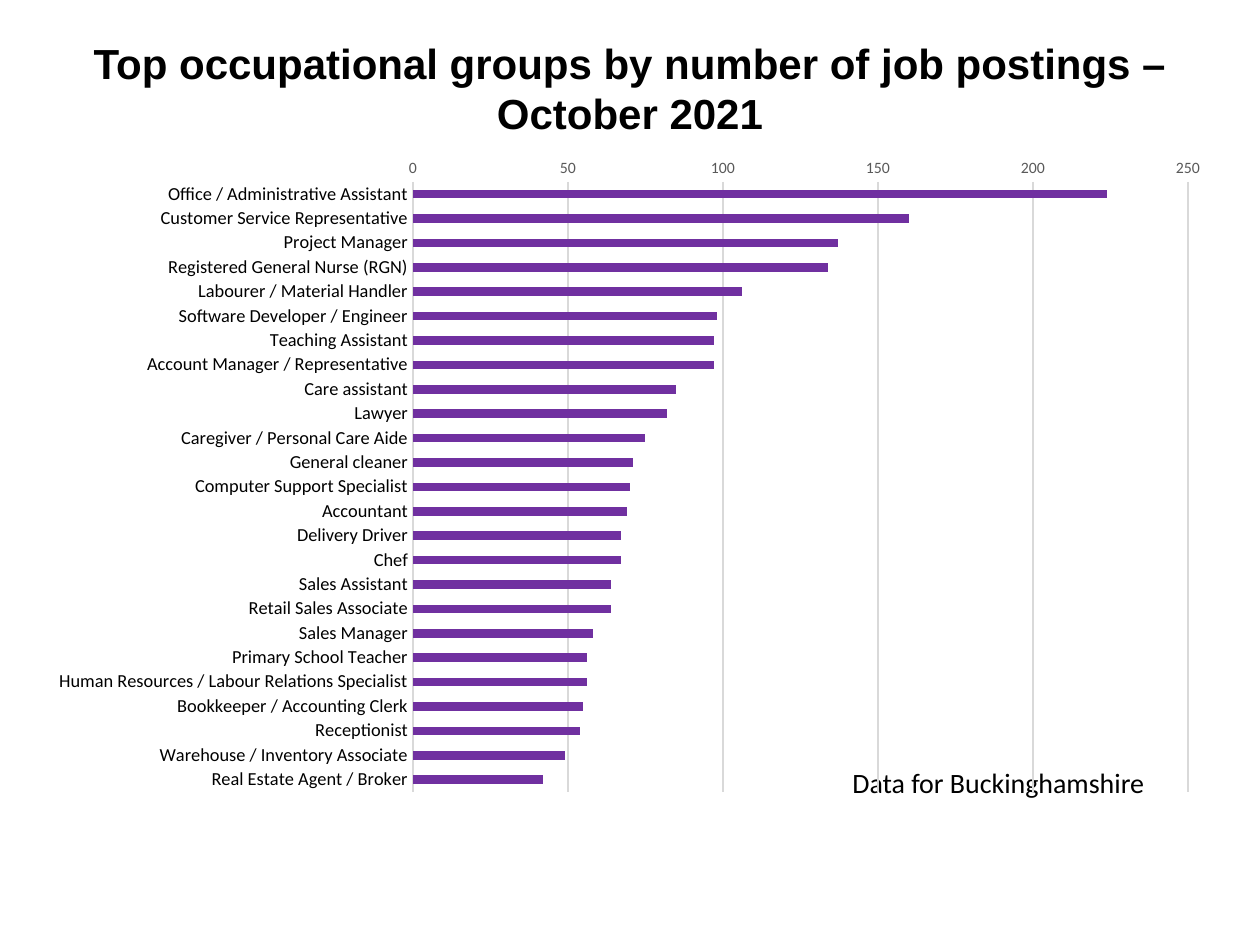
import lxml.etree
import pptx
import pptx.chart.data
import pptx.dml.color
import pptx.enum.chart
import pptx.enum.text
import pptx.oxml
import pptx.oxml.ns
import pptx.util

PX = 914400 // 126
COLORS = {"ink": "000000", "bar": "7030A0", "grid": "D9D9D9", "scale": "595959"}
JOBS = {
    "Office / Administrative Assistant": 224,
    "Customer Service Representative": 160,
    "Project Manager": 137,
    "Registered General Nurse (RGN)": 134,
    "Labourer / Material Handler": 106,
    "Software Developer / Engineer": 98,
    "Teaching Assistant": 97,
    "Account Manager / Representative": 97,
    "Care assistant": 85,
    "Lawyer": 82,
    "Caregiver / Personal Care Aide": 75,
    "General cleaner": 71,
    "Computer Support Specialist": 70,
    "Accountant": 69,
    "Delivery Driver": 67,
    "Chef": 67,
    "Sales Assistant": 64,
    "Retail Sales Associate": 64,
    "Sales Manager": 58,
    "Primary School Teacher": 56,
    "Human Resources / Labour Relations Specialist": 56,
    "Bookkeeper / Accounting Clerk": 55,
    "Receptionist": 54,
    "Warehouse / Inventory Associate": 49,
    "Real Estate Agent / Broker": 42,
}


def rgb(name):
    return pptx.dml.color.RGBColor.from_string(COLORS[name])


def style(font, size, color="ink", face="Calibri", bold=False):
    font.size = pptx.util.Pt(size)
    font.name = face
    font.bold = bold
    font.color.rgb = rgb(color)


def add_text(slide, text, box, align="LEFT", anchor="TOP", **look):
    frame = slide.shapes.add_textbox(*(n * PX for n in box)).text_frame
    frame.word_wrap = True
    frame.vertical_anchor = getattr(pptx.enum.text.MSO_ANCHOR, anchor)
    para = frame.paragraphs[0]
    para.alignment = getattr(pptx.enum.text.PP_ALIGN, align)
    run = para.add_run()
    run.text = text
    style(run.font, **look)


def draw_line(line):
    line.color.rgb = rgb("grid")
    line.width = pptx.util.Pt(0.75)


def place_plot(chart, box, plot):
    """Fix the inner plot area, given in slide px, within the chart box."""
    left, top, width, height = box
    x, y, w, h = plot
    parts = {"x": (x - left) / width, "y": (y - top) / height,
             "w": w / width, "h": h / height}
    modes = '<c:layoutTarget val="inner"/><c:xMode val="edge"/><c:yMode val="edge"/>'
    sizes = "".join(f'<c:{key} val="{val:.4f}"/>' for key, val in parts.items())
    area = chart.plots[0]._element.getparent()
    for old in area.findall(pptx.oxml.ns.qn("c:layout")):
        area.remove(old)
    area.insert(0, pptx.oxml.parse_xml(
        f'<c:layout {pptx.oxml.ns.nsdecls("c")}>'
        f"<c:manualLayout>{modes}{sizes}</c:manualLayout></c:layout>"))


def add_bars(slide, jobs, box, plot):
    kinds = pptx.enum.chart
    data = pptx.chart.data.CategoryChartData(number_format="#,##0")
    data.categories = list(jobs)
    data.add_series("Series 1", list(jobs.values()))
    chart = slide.shapes.add_chart(
        kinds.XL_CHART_TYPE.BAR_CLUSTERED, *(n * PX for n in box), data).chart
    chart.has_legend = False
    chart.has_title = False
    style(chart.font, 10)

    bars = chart.plots[0]
    bars.gap_width = 182
    bars.vary_by_categories = False
    fill = bars.series[0].format.fill
    fill.solid()
    fill.fore_color.rgb = rgb("bar")

    names, scale = chart.category_axis, chart.value_axis
    for axis in (names, scale):
        axis.major_tick_mark = axis.minor_tick_mark = kinds.XL_TICK_MARK.NONE
    names.reverse_order = True
    draw_line(names.format.line)
    style(names.tick_labels.font, 10.5)

    scale.minimum_scale, scale.maximum_scale, scale.major_unit = 0, 250, 50
    scale.format.line.fill.background()
    draw_line(scale.major_gridlines.format.line)
    scale.tick_labels.number_format = "#,##0"
    scale.tick_labels.number_format_is_linked = False
    style(scale.tick_labels.font, 9, "scale")
    place_plot(chart, box, plot)


def main():
    deck = pptx.Presentation()
    deck.slide_width, deck.slide_height = 1260 * PX, 945 * PX
    slide = deck.slides.add_slide(deck.slide_layouts[6])
    add_text(slide, "Top occupational groups by number of job postings – October 2021",
             (63, 9, 1134, 157), align="CENTER", anchor="MIDDLE",
             size=24, face="Arial", bold=True)
    add_text(slide, "Data for Buckinghamshire", (840, 759, 476, 47), size=16)
    add_bars(slide, JOBS, (35, 145, 1188, 660), (413, 182, 775, 610))
    deck.save("out.pptx")


if __name__ == "__main__":
    main()
